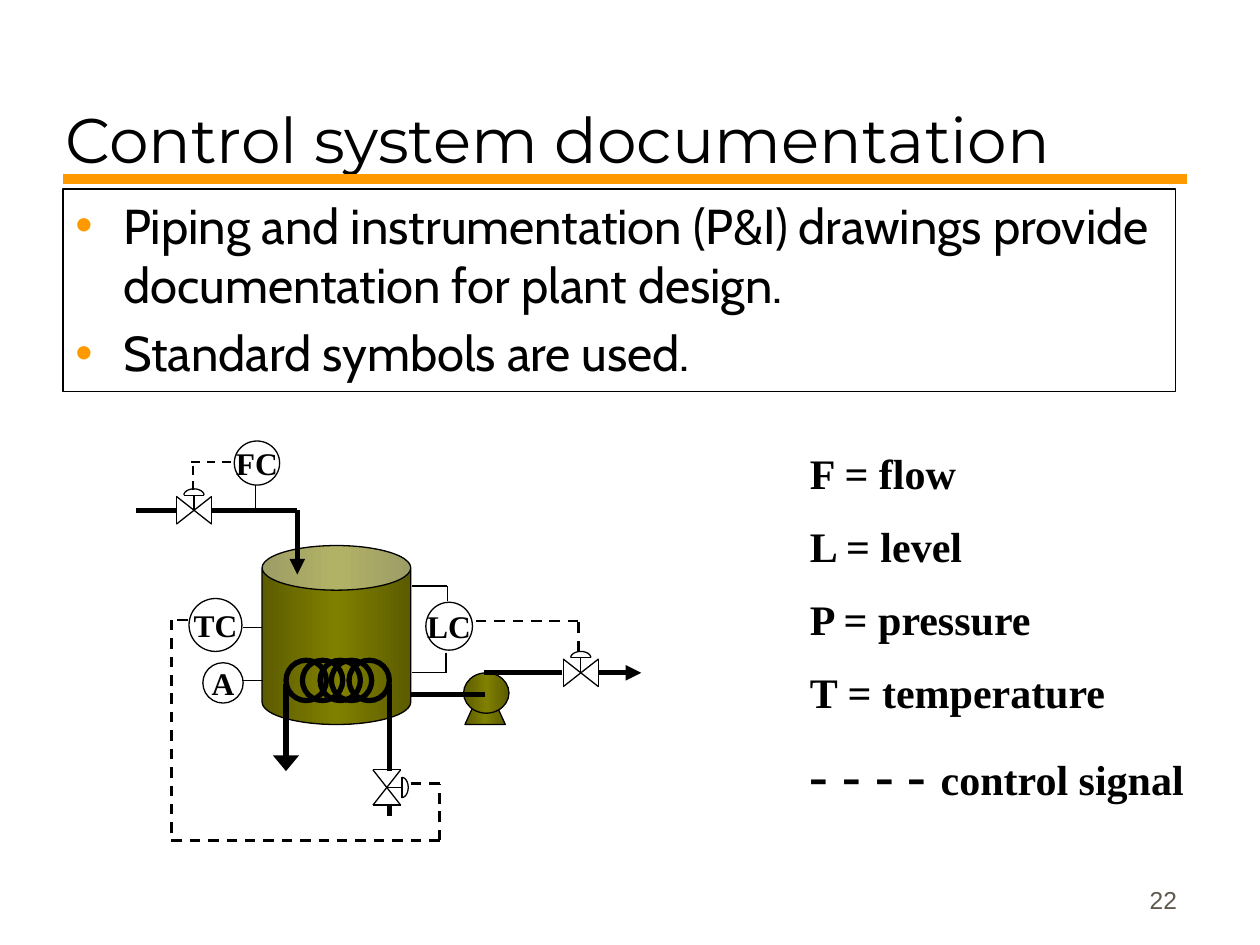
import math

from lxml import etree
from pptx import Presentation
from pptx.dml.color import RGBColor
from pptx.enum.dml import MSO_LINE
from pptx.enum.shapes import MSO_CONNECTOR, MSO_SHAPE
from pptx.enum.text import MSO_ANCHOR, PP_ALIGN
from pptx.oxml.ns import qn
from pptx.util import Pt

PX = 9144  # EMU in one px, 100 px to the inch
BLACK = RGBColor(0x00, 0x00, 0x00)
ORANGE = RGBColor(0xFF, 0x99, 0x00)
GREY = RGBColor(0x5E, 0x57, 0x4E)
OLIVE = RGBColor(0x80, 0x80, 0x00)
DARK_OLIVE = RGBColor(0x5C, 0x5C, 0x00)

STRAIGHT = MSO_CONNECTOR.STRAIGHT
DASH = MSO_LINE.DASH
CAN, OVAL, RECTANGLE = MSO_SHAPE.CAN, MSO_SHAPE.OVAL, MSO_SHAPE.RECTANGLE
PUMP_FOOT = MSO_SHAPE.FLOWCHART_MANUAL_OPERATION
TOP, MIDDLE, BOTTOM = MSO_ANCHOR.TOP, MSO_ANCHOR.MIDDLE, MSO_ANCHOR.BOTTOM
LEFT, CENTER, RIGHT = PP_ALIGN.LEFT, PP_ALIGN.CENTER, PP_ALIGN.RIGHT

THIN, PIPE, SIGNAL = 0.75, 3, 1.5
TITLE_FONT = {"name": "Montserrat", "size": Pt(36)}
BODY_FONT = {"name": "Cabin", "size": Pt(28)}
LEGEND_FONT = {"name": "Times New Roman", "size": Pt(24), "bold": True}
TAG_FONT = {"name": "Times New Roman", "size": Pt(18), "bold": True}
NUMBER_FONT = {"name": "Arial", "size": Pt(14)}


def apply(target, values):
    for name, value in values.items():
        setattr(target, name, value)


def emu(*lengths):
    return [round(length * PX) for length in lengths]


def style_line(line, width, color=BLACK):
    line.color.rgb = color
    line.width = Pt(width)


def add_line(shapes, box, ends, width=THIN, color=BLACK, dash=None, head=None):
    """Straight line; head is the arrowhead width at its end (med or lg)."""
    left, top = box[:2]
    x1, y1, x2, y2 = ends
    connector = shapes.add_connector(
        STRAIGHT, *emu(left + x1, top + y1, left + x2, top + y2))
    style_line(connector.line, width, color)
    if dash:
        connector.line.dash_style = dash
    if head:
        etree.SubElement(connector.line._get_or_add_ln(), qn("a:tailEnd"),
                         type="triangle", w=head, len="med")
    etree.SubElement(connector._element.spPr, qn("a:effectLst"))


def add_outline(shapes, box, kind, area, width=THIN):
    left, top = box[:2]
    x, y, w, h = area
    shape = shapes.add_shape(kind, *emu(left + x, top + y, w, h))
    shape.shadow.inherit = False
    shape.fill.background()
    style_line(shape.line, width)
    return shape


def fill_metal(shape):
    """Olive gradient, dark at both sides."""
    shape.fill.gradient()
    shape.fill.gradient_angle = 0
    stop_list = shape._element.spPr.find(qn("a:gradFill")).find(qn("a:gsLst"))
    for stop in list(stop_list):
        stop_list.remove(stop)
    for position, color in ((0, DARK_OLIVE), (50, OLIVE), (100, DARK_OLIVE)):
        stop = etree.SubElement(stop_list, qn("a:gs"), pos=str(position * 1000))
        etree.SubElement(stop, qn("a:srgbClr"), val=str(color))


def write(shape, paragraphs, font, color=BLACK, align=LEFT, anchor=TOP,
          space=0, wrap=True):
    """Each paragraph is a list of (text, font changes) runs."""
    frame = shape.text_frame
    apply(frame, {"word_wrap": wrap, "vertical_anchor": anchor})
    for index, runs in enumerate(paragraphs):
        paragraph = frame.add_paragraph() if index else frame.paragraphs[0]
        apply(paragraph, {"alignment": align, "space_before": Pt(space)})
        for text, changes in runs:
            run = paragraph.add_run()
            run.text = text
            apply(run.font, {**font, **changes})
            run.font.color.rgb = color
    return frame


def add_title(slide, box):
    write(slide.shapes.add_textbox(*emu(*box)),
          [[("Control system documentation", {})]], TITLE_FONT)
    add_line(slide.shapes, box, (8, 67, 900, 67), width=6, color=ORANGE)


def add_body(slide, box):
    shape = add_outline(slide.shapes, box, RECTANGLE, (0, 0, *box[2:]))
    frame = write(shape, [
        [("Piping and instrumentation (P&I) drawings provide "
          "documentation for plant design.", {})],
        [("Standard symbols are used.", {})],
    ], BODY_FONT, space=5.6)
    for paragraph in frame.paragraphs:
        properties = paragraph._p.get_or_add_pPr()
        properties.set("marL", str(38 * PX))
        properties.set("indent", str(-38 * PX))
        color = etree.SubElement(properties, qn("a:buClr"))
        etree.SubElement(color, qn("a:srgbClr"), val=str(ORANGE))
        etree.SubElement(properties, qn("a:buFont"), typeface="Arial")
        etree.SubElement(properties, qn("a:buChar"), char="•")


def add_valve(shapes, box, center, sideways=False):
    """Control valve; its actuator points up, or right if sideways."""
    def place(along, out):
        x, y = center
        return (x + out, y + along) if sideways else (x + along, y - out)

    for start, end in (((-14, -11), (-14, 11)), ((14, -11), (14, 11)),
                       ((-14, -11), (14, 11)), ((-14, 11), (14, -11)),
                       ((0, 0), (0, 12)), ((-8, 12), (8, 12))):
        add_line(shapes, box, (*place(*start), *place(*end)))
    # Actuator dome
    points = []
    for step in range(13):
        angle = math.pi * step / 12
        x, y = place(8 * math.cos(angle), 12 + 5 * math.sin(angle))
        points.append(tuple(emu(box[0] + x, box[1] + y)))
    builder = shapes.build_freeform(*points[0])
    builder.add_line_segments(points[1:], close=False)
    dome = builder.convert_to_shape()
    dome.shadow.inherit = False
    dome.fill.background()
    style_line(dome.line, THIN)


def add_process(slide, box):
    shapes = slide.shapes.add_group_shape().shapes

    # Tank and pump
    tank = add_outline(shapes, box, CAN, (108, 133, 118, 142))
    tank.adjustments[0] = 0.3
    foot = add_outline(shapes, box, PUMP_FOOT, (269, 261, 32, 14))
    foot._element.spPr.xfrm.set("flipV", "1")
    pump = add_outline(shapes, box, OVAL, (268, 234, 36, 32))
    for shape in (tank, foot, pump):
        fill_metal(shape)

    # Heating coil
    for x in (127, 140, 154, 163, 177):
        add_outline(shapes, box, OVAL, (x, 224, 32, 32), PIPE)

    # Pipes
    for ends, head in (((127, 243, 127, 312), "lg"), ((209, 243, 209, 312), None),
                       ((209, 339, 209, 348), None), ((285, 251, 226, 251), None),
                       ((284, 234, 346, 234), None), ((375, 234, 409, 234), "med"),
                       ((136, 105, 136, 156), "med"), ((136, 105, 68, 105), None),
                       ((40, 105, 8, 105), None)):
        add_line(shapes, box, ends, PIPE, head=head)

    add_valve(shapes, box, (54, 105))
    add_valve(shapes, box, (361, 234))
    add_valve(shapes, box, (207, 325), sideways=True)

    # Instruments
    for tag, area in (("FC", (86, 50, 36, 35)), ("LC", (238, 178, 37, 38)),
                      ("TC", (50, 175, 42, 42)), ("A", (61, 226, 32, 32))):
        frame = write(add_outline(shapes, box, OVAL, area), [[(tag, {})]],
                      TAG_FONT, align=CENTER, anchor=MIDDLE, wrap=False)
        apply(frame, dict.fromkeys(
            ("margin_left", "margin_top", "margin_right", "margin_bottom"), 0))

    # Taps from the instruments to the process
    for ends in ((254, 218, 254, 234), (254, 234, 227, 234),
                 (255, 177, 255, 165), (255, 165, 227, 165),
                 (103, 85, 103, 105), (93, 198, 108, 198), (92, 240, 109, 240)):
        add_line(shapes, box, ends)

    # Control signals
    for width, routes in (
            (1.25, ((53, 89, 53, 66), (52, 67, 86, 67))),
            (SIGNAL, ((359, 217, 359, 193), (359, 193, 277, 193),
                      (49, 192, 36, 192), (36, 192, 36, 367),
                      (36, 367, 249, 367), (249, 367, 249, 322),
                      (249, 322, 224, 322)))):
        for ends in routes:
            add_line(shapes, box, ends, width, dash=DASH)


def add_legend(slide, box):
    names = ("F = flow", "L = level", "P = pressure", "T = temperature")
    signal = [("- - - - ", {"size": Pt(32)}), ("control signal", {})]
    write(slide.shapes.add_textbox(*emu(*box)),
          [[(name, {})] for name in names] + [signal], LEGEND_FONT, space=13)


def add_number(slide, box):
    write(slide.shapes.add_textbox(*emu(*box)), [[("22", {})]], NUMBER_FONT,
          color=GREY, align=RIGHT, anchor=BOTTOM)


def main():
    presentation = Presentation()
    apply(presentation, {"slide_width": 1000 * PX, "slide_height": 750 * PX})
    slide = presentation.slides.add_slide(presentation.slide_layouts[6])
    add_title(slide, (42, 75, 908, 58))
    add_process(slide, (100, 300, 410, 370))
    add_body(slide, (50, 150, 883, 161))
    add_legend(slide, (633, 350, 333, 313))
    add_number(slide, (736, 681, 208, 50))
    presentation.save("out.pptx")


if __name__ == "__main__":
    main()
